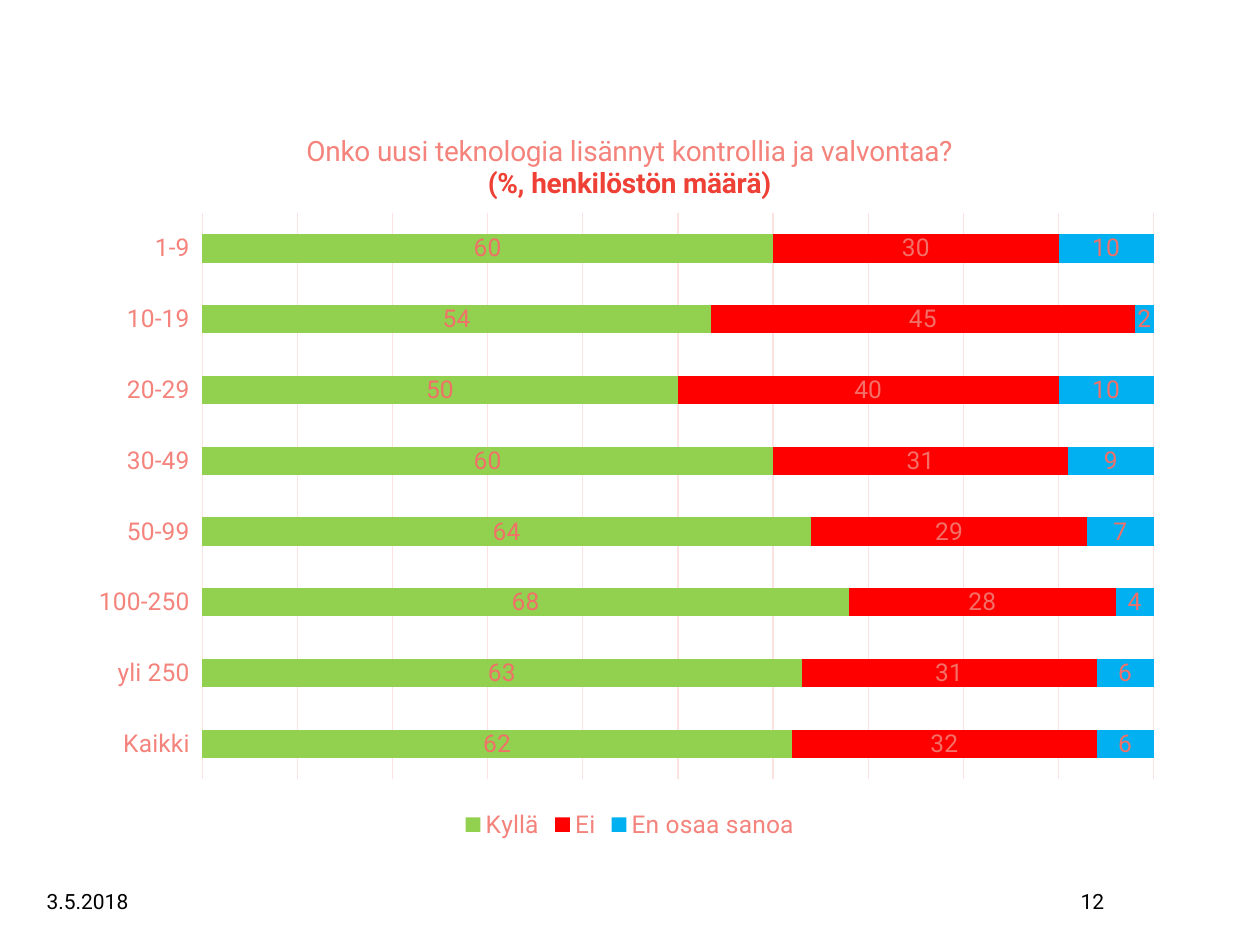
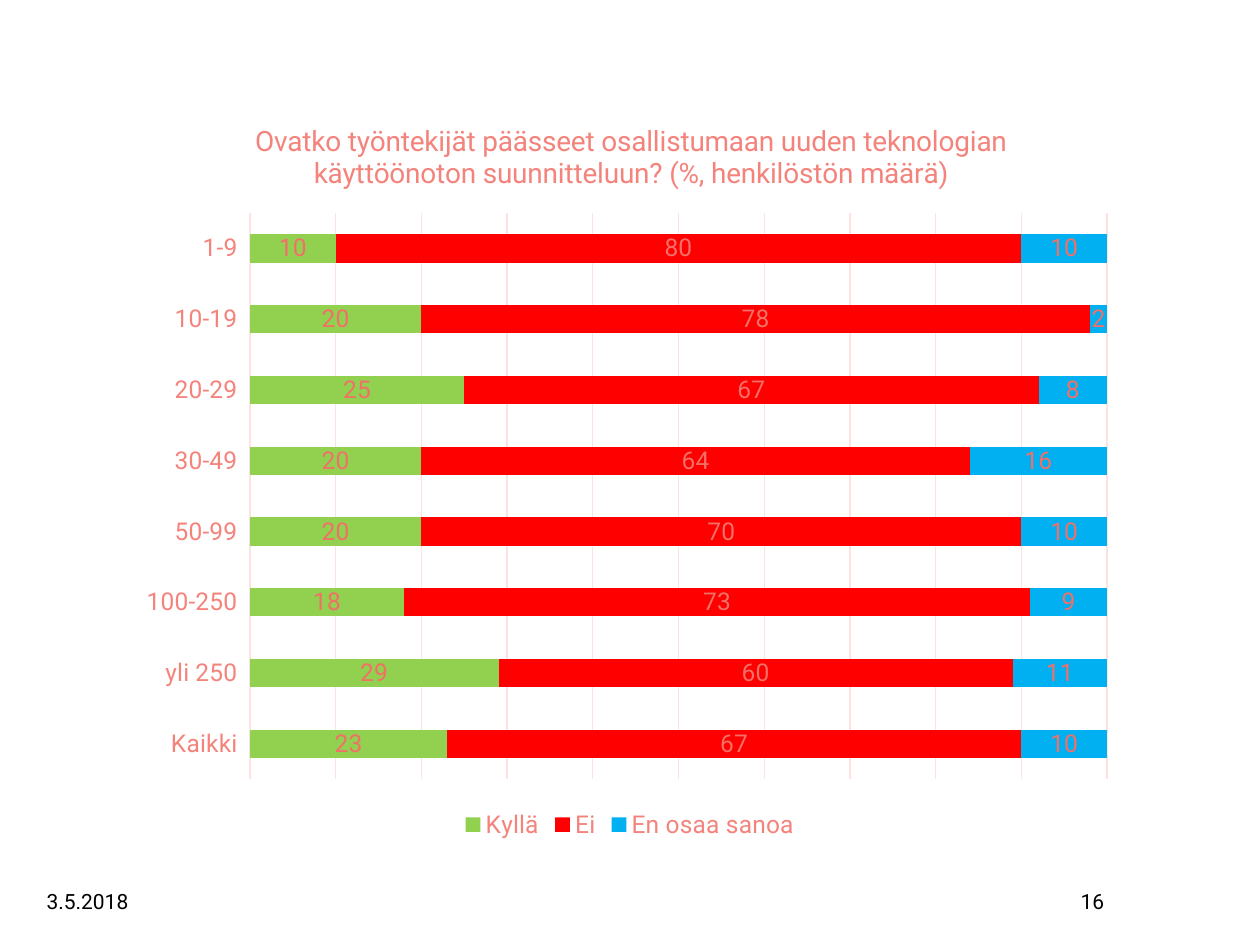
from lxml import etree
from pptx import Presentation
from pptx.chart.data import CategoryChartData
from pptx.dml.color import RGBColor
from pptx.enum.chart import (XL_CHART_TYPE, XL_LABEL_POSITION, XL_LEGEND_POSITION,
                             XL_TICK_LABEL_POSITION, XL_TICK_MARK)
from pptx.enum.text import MSO_ANCHOR, PP_ALIGN
from pptx.oxml.ns import qn
from pptx.util import Cm, Pt

STACKED_BAR = XL_CHART_TYPE.BAR_STACKED_100
CENTER_LABEL = XL_LABEL_POSITION.CENTER
LEGEND_BOTTOM = XL_LEGEND_POSITION.BOTTOM
LABELS_LOW = XL_TICK_LABEL_POSITION.LOW
NO_TICK = XL_TICK_MARK.NONE
MIDDLE = MSO_ANCHOR.MIDDLE
LEFT, RIGHT, CENTER = PP_ALIGN.LEFT, PP_ALIGN.RIGHT, PP_ALIGN.CENTER

FONT = "Roboto"
COLORS = {"text": "000000", "strong": "EE4035", "heading": "F4837C",
          "label": "F27068", "grid": "FCE2E1"}
SERIES_COLORS = {"Kyllä": "92D050", "Ei": "FF0000", "En osaa sanoa": "00B0F0"}
STAFF_SIZES = ["1-9", "10-19", "20-29", "30-49", "50-99", "100-250", "yli 250", "Kaikki"]
DATE = "3.5.2018"
SLIDE_WIDTH, SLIDE_HEIGHT = 25.4, 19.05
CHART_TOP, CHART_HEIGHT = 2.03, 15

# Layout fractions are relative to the chart frame
QUESTIONS = [
    {"number": "12", "width": 22,
     "title": [("Onko uusi teknologia lisännyt kontrollia ja valvontaa?", "heading", False),
               ("(%, henkilöstön määrä)", "strong", True)],
     "title_layout": {"x": 0.2, "y": 0.04},
     "plot_layout": {"x": 0.108, "y": 0.151, "w": 0.872, "h": 0.761},
     "answers": [[60, 54, 50, 60, 64, 68, 63, 62],
                 [30, 45, 40, 31, 29, 28, 31, 32],
                 [10, 2, 10, 9, 7, 4, 6, 6]]},
    {"number": "16", "width": 20,
     "title": [("Ovatko työntekijät päässeet osallistumaan uuden teknologian "
                "käyttöönoton suunnitteluun? (%, henkilöstön määrä)", "heading", False)],
     "title_layout": {"x": 0.117, "y": 0.024},
     "plot_layout": {"x": 0.117, "y": 0.151, "w": 0.864, "h": 0.761},
     "answers": [[10, 20, 25, 20, 20, 18, 29, 23],
                 [80, 78, 67, 64, 70, 73, 60, 67],
                 [10, 2, 8, 16, 10, 9, 11, 10]]},
]


def style_font(font, size, color, bold=False):
    font.name = FONT
    font.size = Pt(size)
    font.bold = bold
    font.color.rgb = RGBColor.from_string(color)


def set_layout(parent, index, fractions, inner=False):
    for old_layout in parent.findall(qn("c:layout")):
        parent.remove(old_layout)
    layout = etree.Element(qn("c:layout"))
    manual = etree.SubElement(layout, qn("c:manualLayout"))
    settings = [("layoutTarget", "inner")] if inner else []
    settings += [("xMode", "edge"), ("yMode", "edge")]
    settings += list(fractions.items())
    for name, value in settings:
        etree.SubElement(manual, qn("c:" + name)).set("val", str(value))
    parent.insert(index, layout)


presentation = Presentation()
presentation.slide_width = Cm(SLIDE_WIDTH)
presentation.slide_height = Cm(SLIDE_HEIGHT)
blank_layout = presentation.slide_layouts[6]

for question in QUESTIONS:
    slide = presentation.slides.add_slide(blank_layout)

    # Chart, centred on the slide
    chart_data = CategoryChartData()
    chart_data.categories = STAFF_SIZES
    for answer, values in zip(SERIES_COLORS, question["answers"]):
        chart_data.add_series(answer, values)
    chart = slide.shapes.add_chart(
        STACKED_BAR, Cm((SLIDE_WIDTH - question["width"]) / 2), Cm(CHART_TOP),
        Cm(question["width"]), Cm(CHART_HEIGHT), chart_data).chart
    style_font(chart.font, 10, COLORS["strong"])

    # Question as chart title
    chart.has_title = True
    title_frame = chart.chart_title.text_frame
    for position, (text, color, bold) in enumerate(question["title"]):
        paragraph = title_frame.add_paragraph() if position else title_frame.paragraphs[0]
        paragraph.alignment = CENTER
        run = paragraph.add_run()
        run.text = text
        style_font(run.font, 16, COLORS[color], bold)
    chart.chart_title.include_in_layout = False
    set_layout(chart.element.find(".//" + qn("c:title")), 1, question["title_layout"])
    set_layout(chart.element.find(".//" + qn("c:plotArea")), 0, question["plot_layout"], True)

    # Bars and value labels
    plot = chart.plots[0]
    plot.gap_width = 150
    plot.overlap = 100
    plot.vary_by_categories = False
    for series in plot.series:
        series.format.fill.solid()
        series.format.fill.fore_color.rgb = RGBColor.from_string(SERIES_COLORS[series.name])
        labels = series.data_labels
        labels.show_value = True
        labels.position = CENTER_LABEL
        style_font(labels.font, 14, COLORS["label"])

    # Axes and grid
    category_axis, value_axis = chart.category_axis, chart.value_axis
    category_axis.reverse_order = True
    category_axis.major_tick_mark = NO_TICK
    category_axis.minor_tick_mark = NO_TICK
    category_axis.tick_label_position = LABELS_LOW
    style_font(category_axis.tick_labels.font, 14, COLORS["heading"])
    value_axis.visible = False
    value_axis.major_unit = 0.1
    value_axis.has_major_gridlines = True
    for line in (category_axis.format.line, value_axis.major_gridlines.format.line):
        line.width = Pt(0.75)
        line.color.rgb = RGBColor.from_string(COLORS["grid"])

    # Legend
    chart.has_legend = True
    chart.legend.position = LEGEND_BOTTOM
    chart.legend.include_in_layout = False
    style_font(chart.legend.font, 14, COLORS["heading"])

    # Footer: date and slide number
    for text, left, width, alignment in [(DATE, 0.69, 6.07, LEFT),
                                         (question["number"], 20.12, 2.39, RIGHT)]:
        shape = slide.shapes.add_textbox(Cm(left), Cm(17.65), Cm(width), Cm(1.02))
        shape.text_frame.word_wrap = True
        shape.text_frame.vertical_anchor = MIDDLE
        paragraph = shape.text_frame.paragraphs[0]
        paragraph.alignment = alignment
        run = paragraph.add_run()
        run.text = text
        style_font(run.font, 12, COLORS["text"])

presentation.save("out.pptx")
